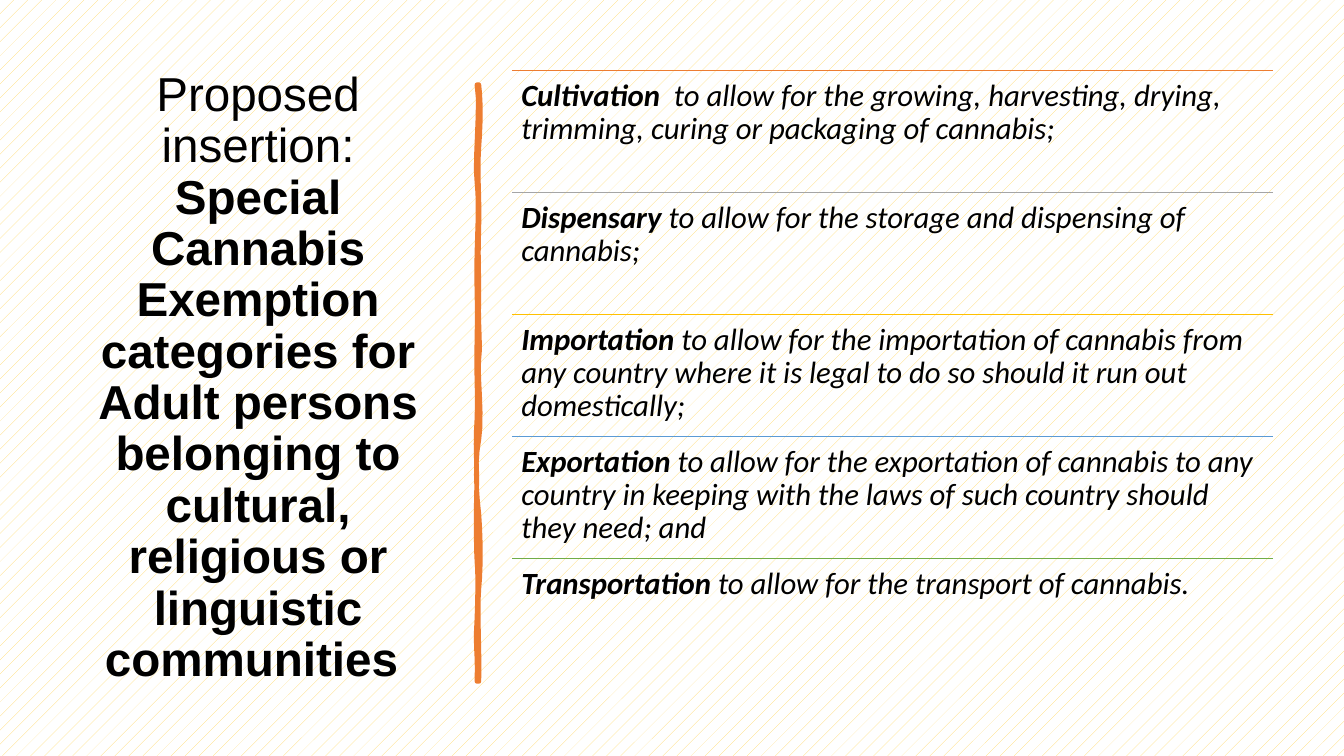
from lxml import etree
from pptx import Presentation
from pptx.dml.color import RGBColor
from pptx.enum.dml import MSO_PATTERN
from pptx.enum.shapes import MSO_CONNECTOR
from pptx.enum.text import MSO_ANCHOR, MSO_AUTO_SIZE, PP_ALIGN
from pptx.oxml.ns import qn
from pptx.util import Inches, Pt

DOTS = MSO_PATTERN.PERCENT_5
STRAIGHT = MSO_CONNECTOR.STRAIGHT
TOP, MIDDLE = MSO_ANCHOR.TOP, MSO_ANCHOR.MIDDLE
LEFT, CENTER = PP_ALIGN.LEFT, PP_ALIGN.CENTER
FIXED = MSO_AUTO_SIZE.NONE
ORANGE = "ED7D31"

TITLE = [
    ("Proposed insertion: ", False),
    ("Special Cannabis Exemption categories for Adult persons belonging to "
     "cultural, religious or linguistic communities ", True),
]
ITEMS = [
    (ORANGE, "Cultivation ", " to allow for the growing, harvesting, drying, "
     "trimming, curing or packaging of cannabis;"),
    ("A5A5A5", "Dispensary ",
     "to allow for the storage and dispensing of cannabis;"),
    ("FFC000", "Importation ", "to allow for the importation of cannabis from "
     "any country where it is legal to do so should it run out domestically;"),
    ("5B9BD5", "Exportation ", "to allow for the exportation of cannabis to any "
     "country in keeping with the laws of such country should they need; and"),
    ("70AD47", "Transportation ", "to allow for the transport of cannabis."),
]

# Each edge of the bar: curves as two control points and an end, from its box
RIGHT_EDGE = [
    (.04, .18, .04, .35, .02, .62), (0, .89, .03, 1.11, .02, 1.42),
    (.01, 1.73, .02, 1.78, .02, 2.1), (.01, 2.41, .04, 2.58, .02, 2.72),
    (0, 2.86, .06, 3.3, .02, 3.52), (-.02, 3.73, -.01, 4, .02, 4.26),
    (.04, 4.52, .04, 4.8, .02, 5), (0, 5.19, .03, 5.66, .02, 5.92),
]
LEFT_EDGE = [
    (.01, 5.62, -.02, 5.6, 0, 5.29), (.01, 4.99, .01, 4.86, 0, 4.73),
    (-.01, 4.6, -.01, 4.11, 0, 3.93), (0, 3.75, -.02, 3.61, 0, 3.31),
    (.01, 3.02, -.01, 2.89, 0, 2.51), (.01, 2.14, -.01, 1.97, 0, 1.66),
    (.01, 1.34, .02, 1.16, 0, .97), (-.03, .79, .04, .2, 0, 0),
]


def color(code):
    return RGBColor.from_string(code)


def write(shape, runs, size=22, font="Calibri", ink="000000", italic=False,
          align=LEFT, anchor=TOP, inset=0.1):
    """Fill a shape with one paragraph of (text, bold) runs."""
    frame = shape.text_frame
    frame.word_wrap = True
    frame.auto_size = FIXED
    frame.vertical_anchor = anchor
    frame.margin_left = frame.margin_right = Inches(inset)
    frame.margin_top = frame.margin_bottom = Inches(inset if inset < 0.1 else 0.05)
    para = frame.paragraphs[0]
    para.alignment = align
    para.line_spacing = 0.9
    for text, bold in runs:
        run = para.add_run()
        run.text = text
        run.font.name = font
        run.font.size = Pt(size)
        run.font.bold = bold
        run.font.italic = italic
        run.font.color.rgb = color(ink)


def add_title(slide, x, y, w, h):
    title = slide.shapes.title
    title.left, title.top = Inches(x), Inches(y)
    title.width, title.height = Inches(w), Inches(h)
    write(title, TITLE, size=34, font="Arial", align=CENTER, anchor=MIDDLE)


def trace(start, curves, steps=6):
    """Points along a chain of cubic curves."""
    points = [start]
    for ax, ay, bx, by, ex, ey in curves:
        sx, sy = points[-1]
        for step in range(1, steps + 1):
            t = step / steps
            u = 1 - t
            points.append(tuple(
                u**3 * s + 3 * u * u * t * a + 3 * u * t * t * b + t**3 * e
                for s, a, b, e in ((sx, ax, bx, ex), (sy, ay, by, ey))))
    return points


def add_bar(slide, x, y):
    """Hand-drawn upright bar between title and list."""
    points = trace((.02, 0), RIGHT_EDGE) + trace((0, 5.92), LEFT_EDGE)
    spots = [(Inches(x + px), Inches(y + py)) for px, py in points]
    pen = slide.shapes.build_freeform(*spots[0])
    pen.add_line_segments(spots[1:], close=True)
    bar = pen.convert_to_shape()
    bar.shadow.inherit = False
    bar.fill.solid()
    bar.fill.fore_color.rgb = color(ORANGE)
    bar.line.color.rgb = color(ORANGE)
    bar.line.width = Pt(3.25)
    etree.SubElement(bar.line._get_or_add_ln(), qn("a:round"))


def add_rule(slide, x, y, w, ink):
    rule = slide.shapes.add_connector(
        STRAIGHT, Inches(x), Inches(y), Inches(x + w), Inches(y))
    rule.line.color.rgb = color(ink)
    rule.line.width = Pt(1)
    etree.SubElement(rule._element.spPr, qn("a:effectLst"))


def add_list(slide, x, y, w, h):
    """Equal rows, each under a coloured rule."""
    row = h / len(ITEMS)
    for i, (ink, name, detail) in enumerate(ITEMS):
        top = y + i * row
        add_rule(slide, x, top, w, ink)
        box = slide.shapes.add_textbox(
            Inches(x), Inches(top), Inches(w), Inches(row))
        write(box, [(name, True), (detail, False)], italic=True, inset=0.09)


def main():
    deck = Presentation()
    deck.slide_width, deck.slide_height = Inches(13.33), Inches(7.5)
    slide = deck.slides.add_slide(deck.slide_layouts[5])

    # Background
    back = slide.background.fill
    back.patterned()
    back.pattern = DOTS
    back.fore_color.rgb = color("FFD966")
    back.back_color.rgb = color("FFFFFF")

    # Regions
    add_title(slide, 0.69, 0.7, 3.74, 6.11)
    add_bar(slide, 4.73, 0.84)
    add_list(slide, 5.08, 0.7, 7.55, 6.05)
    deck.save("out.pptx")


if __name__ == "__main__":
    main()
